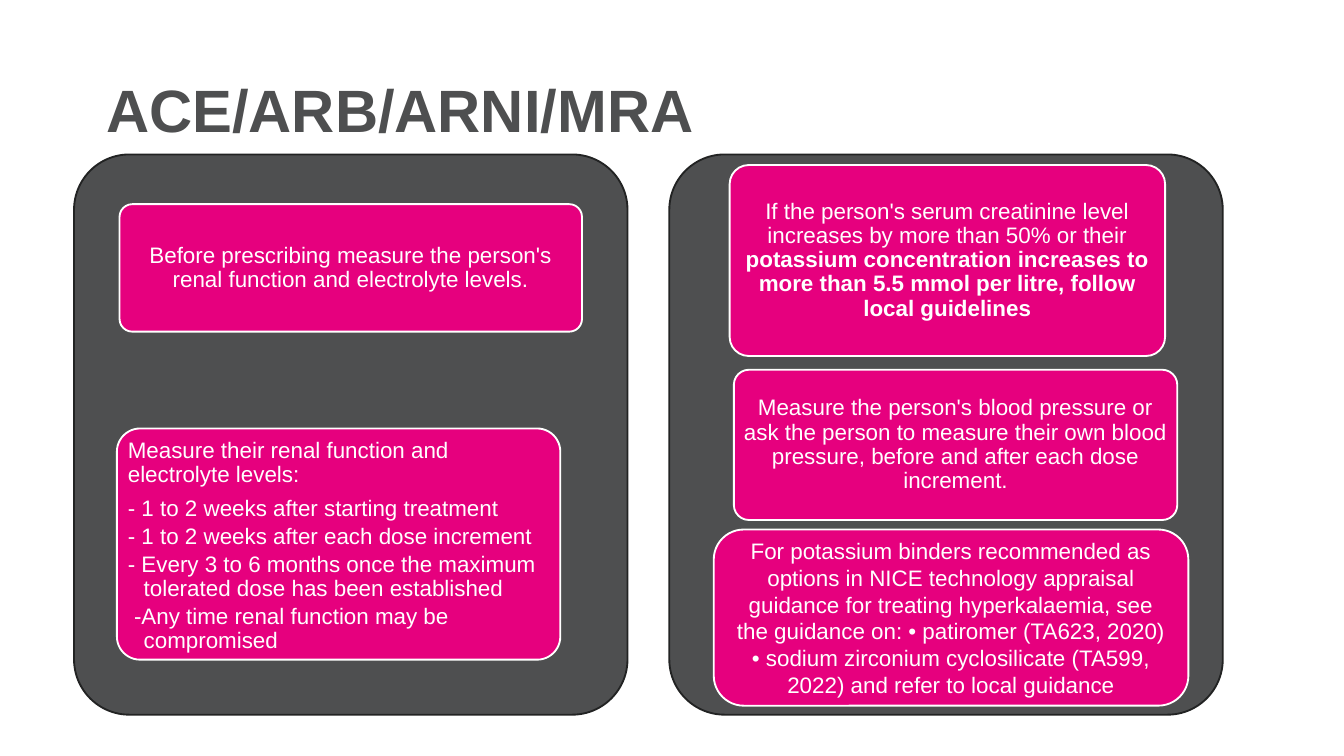
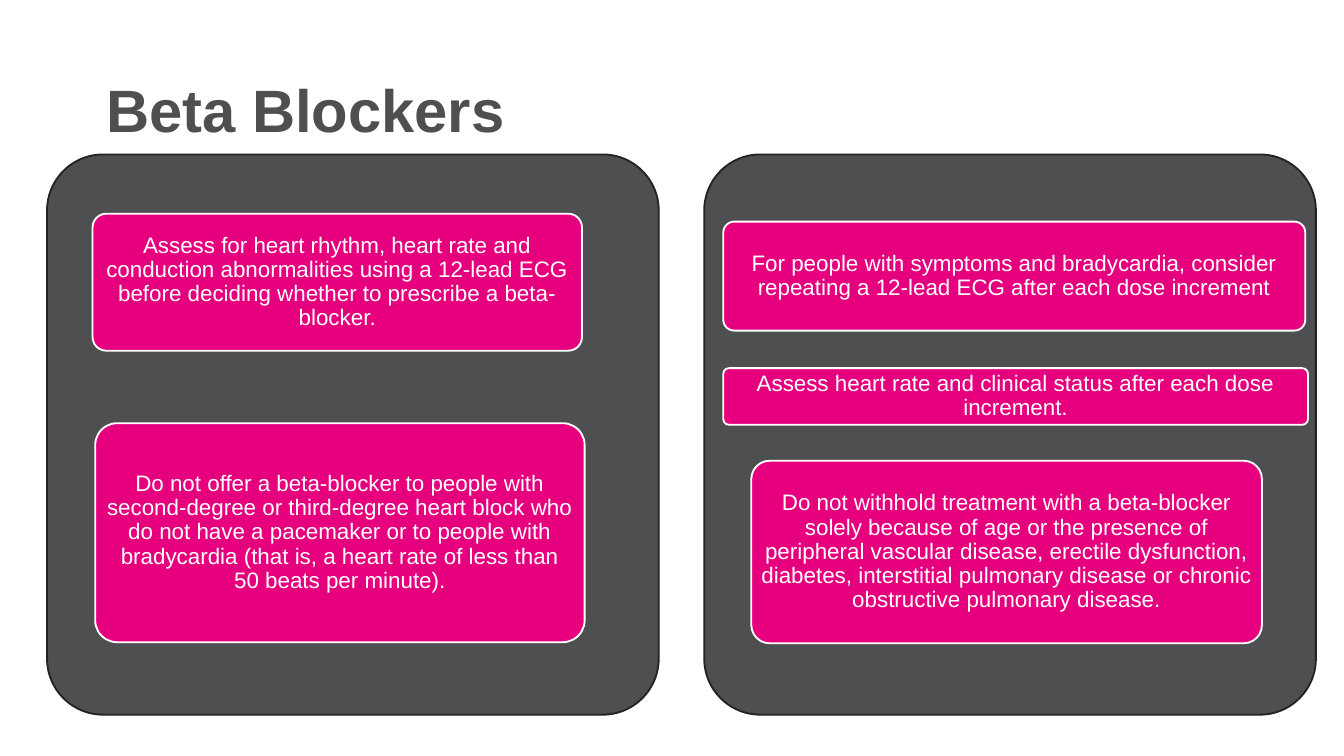
from pptx import Presentation
from pptx.dml.color import RGBColor
from pptx.enum.shapes import MSO_SHAPE
from pptx.enum.text import MSO_ANCHOR, MSO_AUTO_SIZE, PP_ALIGN
from pptx.util import Cm, Pt

ROUNDED = MSO_SHAPE.ROUNDED_RECTANGLE
TOP, MIDDLE = MSO_ANCHOR.TOP, MSO_ANCHOR.MIDDLE
LEFT, CENTER = PP_ALIGN.LEFT, PP_ALIGN.CENTER
NO_FIT = MSO_AUTO_SIZE.NONE

GREY = RGBColor(0x4E, 0x4F, 0x50)
OUTLINE = RGBColor(0x22, 0x23, 0x23)
PINK = RGBColor(0xE6, 0x00, 0x7E)
WHITE = RGBColor(0xFF, 0xFF, 0xFF)

TITLE_FONT = {"name": "Arial", "size": Pt(32), "bold": True}
CARD_FONT = {"name": "Arial", "size": Pt(12), "bold": False}
CARD_PARAGRAPH = {"alignment": CENTER, "line_spacing": 0.9}
LOOSE_PARAGRAPH = {"alignment": CENTER, "line_spacing": 1.0}
LEAD_PARAGRAPH = {"alignment": LEFT, "line_spacing": 0.9, "space_after": Pt(5)}
ITEM_PARAGRAPH = {"alignment": LEFT, "line_spacing": 0.9, "space_after": Pt(2), "level": 1}
SMALL_MARGINS = dict.fromkeys(("margin_left", "margin_right", "margin_top", "margin_bottom"), Cm(0.08))
ITEM_INDENT = Cm(0.3)
PANEL_TOP, PANEL_HEIGHT = 2.92, 10.59

MONITORING_LEAD = "Measure their renal function and electrolyte levels:"
MONITORING_ITEMS = [
    "- 1 to 2 weeks after starting treatment",
    "- 1 to 2 weeks after each dose increment",
    "- Every 3 to 6 months once the maximum tolerated dose has been established",
    " -Any time renal function may be compromised",
]
CREATININE = "If the person's serum creatinine level increases by more than 50% or their "
POTASSIUM = ("potassium concentration increases to more than 5.5 mmol per litre, "
             "follow local guidelines")
BINDERS = ("For potassium binders recommended as options in NICE technology appraisal "
           "guidance for treating hyperkalaemia, see the guidance on: • patiromer "
           "(TA623, 2020) • sodium zirconium cyclosilicate (TA599, 2022) and refer "
           "to local guidance")

RENAL_CARDS = [
    ((2.26, 3.86, 8.74, 2.41),
     "Before prescribing measure the person's renal function and electrolyte levels."),
    ((13.87, 6.99, 8.38, 2.84),
     "Measure the person's blood pressure or ask the person to measure their own "
     "blood pressure, before and after each dose increment."),
]
BETA_CARDS = [
    ((1.75, 4.04, 9.25, 2.59),
     "Assess for heart rhythm, heart rate and conduction abnormalities using a 12-lead "
     "ECG before deciding whether to prescribe a beta-blocker."),
    ((1.8, 8, 9.25, 4.14),
     "Do not offer a beta-blocker to people with second-degree or third-degree heart "
     "block who do not have a pacemaker or to people with bradycardia (that is, a heart "
     "rate of less than 50 beats per minute)."),
    ((13.67, 4.19, 11, 2.06),
     "For people with symptoms and bradycardia, consider repeating a 12-lead ECG after "
     "each dose increment"),
    ((13.67, 6.96, 11.05, 1.07),
     "Assess heart rate and clinical status after each dose increment."),
    ((14.2, 8.71, 9.65, 3.45),
     "Do not withhold treatment with a beta-blocker solely because of age or the presence "
     "of peripheral vascular disease, erectile dysfunction, diabetes, interstitial "
     "pulmonary disease or chronic obstructive pulmonary disease."),
]


def apply(target, values):
    """Set each named format value on the target."""
    for name, value in values.items():
        setattr(target, name, value)


def add_run(paragraph, text, font, color):
    """Append a formatted run and return it."""
    run = paragraph.add_run()
    run.text = text
    apply(run.font, font)
    run.font.color.rgb = color
    return run


def add_rounded(slide, box, fill, line, corner=0.1):
    """Draw a flat rounded rectangle."""
    shape = slide.shapes.add_shape(ROUNDED, *map(Cm, box))
    shape.adjustments[0] = corner
    shape.shadow.inherit = False
    shape.fill.solid()
    shape.fill.fore_color.rgb = fill
    shape.line.color.rgb = line
    shape.line.width = Pt(1)
    return shape


def add_panels(slide, lefts, width):
    """Draw the grey panels behind the cards."""
    for left in lefts:
        add_rounded(slide, (left, PANEL_TOP, width, PANEL_HEIGHT), GREY, OUTLINE)


def add_card(slide, box, text, corner=0.1, margins=SMALL_MARGINS, style=CARD_PARAGRAPH):
    """Draw a pink card with its first paragraph and return its text frame."""
    frame = add_rounded(slide, box, PINK, WHITE, corner).text_frame
    apply(frame, {"word_wrap": True, "vertical_anchor": MIDDLE, **margins})
    paragraph = frame.paragraphs[0]
    apply(paragraph, style)
    add_run(paragraph, text, CARD_FONT, WHITE)
    return frame


def add_items(frame, items):
    """Add hanging dash items below the first paragraph."""
    for item in items:
        paragraph = frame.add_paragraph()
        apply(paragraph, ITEM_PARAGRAPH)
        properties = paragraph._p.get_or_add_pPr()
        properties.set("marL", str(ITEM_INDENT))
        properties.set("indent", str(-ITEM_INDENT))
        add_run(paragraph, item, CARD_FONT, WHITE)


def add_titled_slide(presentation, title):
    """Add a slide with its title placeholder in place."""
    slide = presentation.slides.add_slide(presentation.slide_layouts[5])
    shape = slide.shapes.title
    apply(shape, {"left": Cm(1.75), "top": Cm(0.76), "width": Cm(21.4), "height": Cm(2.77)})
    apply(shape.text_frame, {"word_wrap": True, "auto_size": NO_FIT, "vertical_anchor": MIDDLE})
    paragraph = shape.text_frame.paragraphs[0]
    apply(paragraph, {"alignment": LEFT, "line_spacing": 0.9})
    add_run(paragraph, title, TITLE_FONT, GREY)
    return slide


def build_renal_slide(presentation):
    """Build the slide on renal monitoring."""
    slide = add_titled_slide(presentation, "ACE/ARB/ARNI/MRA")
    add_panels(slide, (1.4, 12.65), 10.46)
    for box, text in RENAL_CARDS:
        add_card(slide, box, text)
    monitoring = add_card(slide, (2.21, 8.1, 8.38, 4.37), MONITORING_LEAD, style=LEAD_PARAGRAPH)
    monitoring.vertical_anchor = TOP
    add_items(monitoring, MONITORING_ITEMS)
    creatinine = add_card(slide, (13.79, 3.12, 8.23, 3.61), CREATININE)
    add_run(creatinine.paragraphs[0], POTASSIUM, {**CARD_FONT, "bold": True}, WHITE)
    add_card(slide, (13.49, 10.01, 8.97, 3.33), BINDERS, 0.17, {}, LOOSE_PARAGRAPH)


def build_beta_slide(presentation):
    """Build the slide on beta blockers."""
    slide = add_titled_slide(presentation, "Beta Blockers")
    add_panels(slide, (0.89, 13.31), 11.56)
    for box, text in BETA_CARDS:
        add_card(slide, box, text)


def main():
    """Build and save the presentation."""
    presentation = Presentation()
    apply(presentation, {"slide_width": Cm(25.4), "slide_height": Cm(14.29)})
    build_renal_slide(presentation)
    build_beta_slide(presentation)
    presentation.save("out.pptx")


if __name__ == "__main__":
    main()
